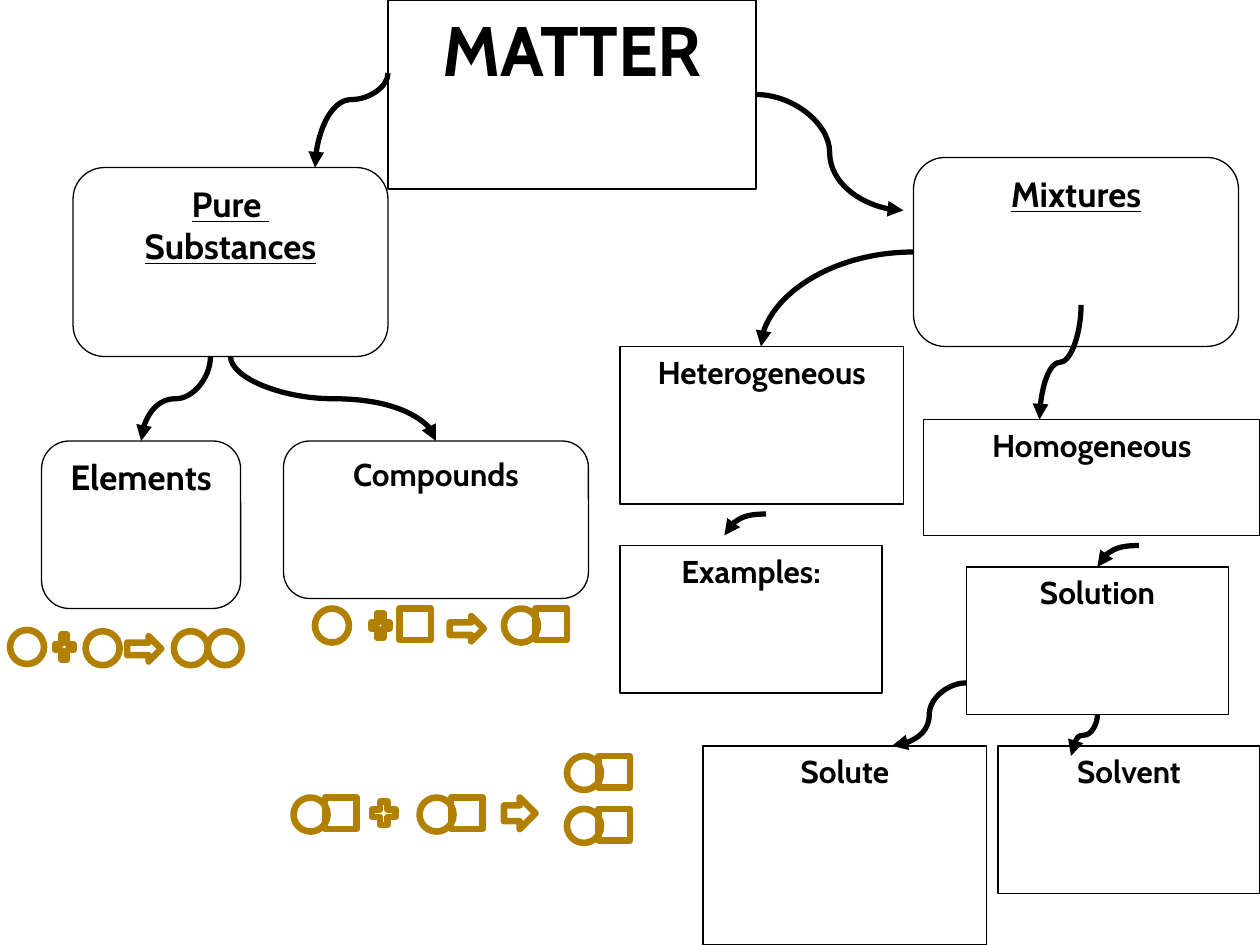
from lxml import etree
from pptx import Presentation
from pptx import util as u
from pptx.dml.color import RGBColor
from pptx.enum import shapes, text
from pptx.oxml import ns

HUES = {"ink": "000000", "gold": "B28000"}
KIND = shapes.MSO_SHAPE


def write(frame, words, size=18, bold=True, under=None, hue="ink", font="Cabin"):
    frame.word_wrap = False
    frame.auto_size = text.MSO_AUTO_SIZE.NONE
    frame.vertical_anchor = text.MSO_ANCHOR.TOP
    for i, line in enumerate(words.split("\n")):
        para = frame.paragraphs[0] if i == 0 else frame.add_paragraph()
        para.alignment = text.PP_ALIGN.CENTER
        run = para.add_run()
        run.text = line
        run.font.name = font
        run.font.size = u.Pt(size)
        run.font.bold = bold
        run.font.underline = under
        run.font.color.rgb = RGBColor.from_string(HUES[hue])


class Chart:
    thin, thick, curve = 0.75, 3.78, 3
    disc, side = 0.27, 0.25

    def __init__(self, slide):
        self.slide = slide

    def edge(self, shape, hue, width):
        shape.line.color.rgb = RGBColor.from_string(HUES[hue])
        shape.line.width = u.Pt(width)

    def title(self, words, x, y, w, h):
        shape = self.slide.shapes.title
        shape.left, shape.top, shape.width, shape.height = map(u.Inches, (x, y, w, h))
        geom = etree.Element(ns.qn("a:prstGeom"), prst="flowChartAlternateProcess")
        etree.SubElement(geom, ns.qn("a:avLst"))
        shape.element.spPr.insert(1, geom)
        shape.fill.background()
        self.edge(shape, "ink", self.thin)
        write(shape.text_frame, words, size=40)

    def shape(self, kind, x, y, w, h, hue, width):
        shape = self.slide.shapes.add_shape(kind, *map(u.Inches, (x, y, w, h)))
        shape.shadow.inherit = False
        shape.fill.background()
        self.edge(shape, hue, width)
        return shape

    def box(self, words, x, y, w, h, kind=KIND.RECTANGLE, **form):
        shape = self.shape(kind, x, y, w, h, "ink", self.thin)
        write(shape.text_frame, words, **form)

    def mark(self, kind, x, y, w, h):
        self.shape(kind, x, y, w, h, "gold", self.thick)

    def ring(self, x, y):
        self.mark(KIND.OVAL, x, y, self.disc, self.disc)

    def square(self, x, y):
        self.mark(KIND.RECTANGLE, x, y, self.side, self.side)

    def pair(self, x, y):
        self.ring(x, y)
        self.square(x + self.side, y)

    def arrow(self, start, tip, way="down", bend=0.5):
        (x1, y1), (x2, y2) = start, tip
        if way == "down":
            dx, dy = x2 - x1, y2 - y1
            mx, my = (x1 + x2) / 2, (y1 + y2) / 2
            x1, y1, x2, y2 = mx - dy / 2, my + dx / 2, mx + dy / 2, my - dx / 2
        line = self.slide.shapes.add_connector(
            shapes.MSO_CONNECTOR.CURVE, *map(u.Inches, (x1, y1, x2, y2)))
        self.edge(line, "ink", self.curve)
        props = line.element.spPr
        geom = props.find(ns.qn("a:prstGeom"))
        if way == "down":
            props.find(ns.qn("a:xfrm")).set("rot", str(90 * 60000))
        if way == "corner":
            geom.set("prst", "curvedConnector2")
        else:
            etree.SubElement(geom.find(ns.qn("a:avLst")), ns.qn("a:gd"),
                             name="adj1", fmla=f"val {round(bend * 100000)}")
        etree.SubElement(props.find(ns.qn("a:ln")), ns.qn("a:tailEnd"), type="triangle")
        etree.SubElement(props, ns.qn("a:effectLst"))


def main():
    deck = Presentation()
    deck.slide_width, deck.slide_height = u.Inches(10), u.Inches(7.5)
    chart = Chart(deck.slides.add_slide(deck.slide_layouts[5]))

    chart.title("MATTER", 3.08, 0, 2.92, 1.5)
    soft = KIND.ROUNDED_RECTANGLE
    chart.box("Pure \nSubstances", 0.58, 1.33, 2.5, 1.5, soft, size=20, under=True)
    chart.box("Mixtures", 7.25, 1.25, 2.58, 1.5, soft, size=20, under=True)
    chart.box("Elements", 0.33, 3.5, 1.58, 1.33, soft, size=20)
    chart.box("Compounds", 2.25, 3.5, 2.42, 1.25, soft)
    chart.box("Heterogeneous", 4.92, 2.75, 2.25, 1.25)
    chart.box("Homogeneous", 7.33, 3.33, 2.67, 0.92)
    chart.box("Examples:", 4.92, 4.33, 2.08, 1.17)
    chart.box("Solution", 7.67, 4.5, 2.08, 1.17)
    chart.box("Solute", 5.58, 5.92, 2.25, 1.58)
    chart.box("Solvent", 7.92, 5.92, 2.08, 1.17)

    chart.arrow((3.08, 0.58), (2.5, 1.33), bend=0.28)
    chart.arrow((1.67, 2.83), (1.12, 3.5))
    chart.arrow((1.83, 2.83), (3.46, 3.5))
    chart.arrow((8.58, 2.42), (8.25, 3.33))
    chart.arrow((8.71, 5.67), (8.5, 6))
    chart.arrow((6, 0.75), (7.17, 1.67), "across")
    chart.arrow((7.67, 5.42), (7.08, 5.92), "across")
    chart.arrow((7.25, 2), (6.04, 2.75), "corner")
    chart.arrow((9.04, 4.33), (8.71, 4.5), "corner")
    chart.arrow((6.08, 4.08), (5.75, 4.25), "corner")

    for x, y in ((0.08, 5), (0.68, 5.01), (1.38, 5.01), (1.65, 5.01), (2.5, 4.83)):
        chart.ring(x, y)
    chart.square(3.17, 4.83)
    for x, y in ((4, 4.83), (2.33, 6.33), (3.33, 6.33), (4.5, 6), (4.5, 6.42)):
        chart.pair(x, y)
    for x, y, w, h in ((0.41, 5, 0.2, 0.27), (2.92, 4.83, 0.2, 0.27),
                       (2.92, 6.33, 0.25, 0.25)):
        chart.mark(KIND.MATH_PLUS, x, y, w, h)
    for x, y, w, h in ((1.01, 5.05, 0.27, 0.2), (3.57, 4.89, 0.27, 0.2),
                       (4, 6.33, 0.25, 0.25)):
        chart.mark(KIND.RIGHT_ARROW, x, y, w, h)

    deck.save("out.pptx")


if __name__ == "__main__":
    main()
